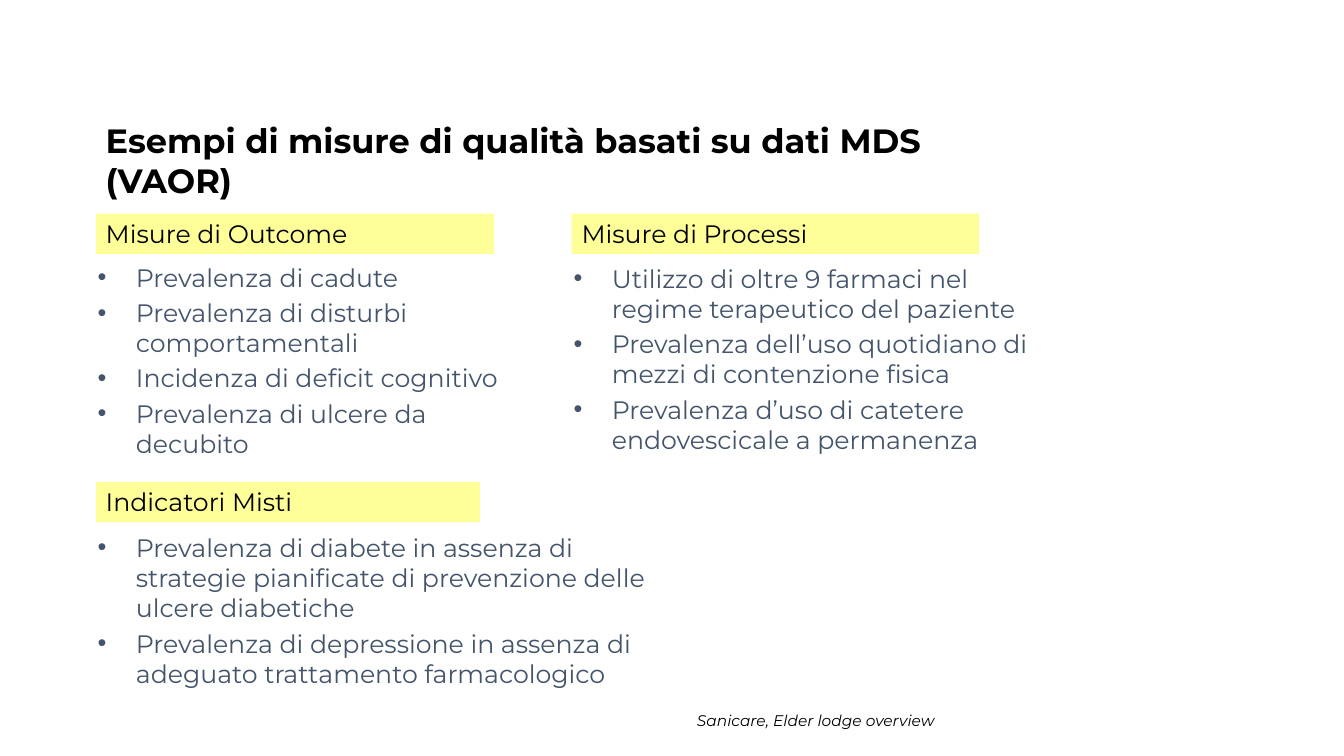
"""Build a slide of quality measures based on MDS data."""
from dataclasses import dataclass

from lxml.etree import SubElement
from pptx import Presentation
from pptx.dml.color import RGBColor
from pptx.enum.shapes import MSO_SHAPE
from pptx.enum.text import MSO_ANCHOR, MSO_AUTO_SIZE, PP_ALIGN
from pptx.oxml.ns import qn
from pptx.util import Emu, Pt


@dataclass(frozen=True)
class Theme:
    """Hold the colours and type sizes."""
    face: str = "Montserrat"
    ink: str = "000000"
    slate: str = "44546A"
    band: str = "FFFF99"
    title: int = 24
    body: int = 18
    note: int = 11
    gap: float = 3.6


THEME = Theme()
SCALE = 9144
INDENT = 38
LEFT, RIGHT = 95, 567
UPPER, LOWER = 212, 478

GROUPS = [
    ("Misure di Outcome", (LEFT, UPPER, 395), (255, 460, 224), [
        "Prevalenza di cadute",
        "Prevalenza di disturbi comportamentali",
        "Incidenza di deficit cognitivo",
        "Prevalenza di ulcere da decubito",
    ]),
    ("Indicatori Misti", (LEFT, LOWER, 381), (523, 580, 208), [
        "Prevalenza di diabete in assenza di strategie pianificate "
        "di prevenzione delle ulcere diabetiche",
        "Prevalenza di depressione in assenza di adeguato trattamento farmacologico",
    ]),
    ("Misure di Processi", (RIGHT, UPPER, 404), (256, 488, 232), [
        "Utilizzo di oltre 9 farmaci nel regime terapeutico del paziente",
        "Prevalenza dell’uso quotidiano di mezzi di contenzione fisica",
        "Prevalenza d’uso di catetere endovescicale a permanenza",
    ]),
]


def px(*sizes):
    """Turn px lengths into EMU."""
    return [Emu(size * SCALE) for size in sizes]


def apply(target, values):
    """Set each named value on the target."""
    for name, value in values.items():
        setattr(target, name, value)


def write(para, text, size, color, **style):
    """Put one styled run in a paragraph."""
    run = para.add_run()
    run.text = text
    apply(run.font, {"name": THEME.face, "size": Pt(size), **style})
    run.font.color.rgb = RGBColor.from_string(color)


def frame(shape, fit=MSO_AUTO_SIZE.SHAPE_TO_FIT_TEXT):
    """Return the wrapped text frame of a shape."""
    text = shape.text_frame
    apply(text, {"word_wrap": True, "auto_size": fit,
                 "vertical_anchor": MSO_ANCHOR.TOP})
    return text


def label(slide, box, text, size, align=PP_ALIGN.LEFT, **style):
    """Add one paragraph of free text."""
    para = frame(slide.shapes.add_textbox(*px(*box))).paragraphs[0]
    para.alignment = align
    write(para, text, size, THEME.ink, **style)


def header(slide, box, text):
    """Add a heading on a filled band."""
    band = slide.shapes.add_shape(MSO_SHAPE.RECTANGLE, *px(*box))
    band.shadow.inherit = False
    band.fill.solid()
    band.fill.fore_color.rgb = RGBColor.from_string(THEME.band)
    band.line.fill.background()
    para = frame(band).paragraphs[0]
    para.alignment = PP_ALIGN.LEFT
    write(para, text, THEME.body, THEME.ink)


def bullets(slide, box, items):
    """Add a bulleted list with hanging indents."""
    text = frame(slide.shapes.add_textbox(*px(*box)), MSO_AUTO_SIZE.NONE)
    indent, = px(INDENT)
    for index, item in enumerate(items):
        para = text.add_paragraph() if index else text.paragraphs[0]
        para.space_before = Pt(THEME.gap)
        props = para._p.get_or_add_pPr()
        props.set("marL", str(indent))
        props.set("indent", str(-indent))
        SubElement(props, qn("a:buFont"), typeface="Arial")
        SubElement(props, qn("a:buChar"), char="•")
        write(para, item, THEME.body, THEME.slate)


def main():
    """Build and save the slide."""
    deck = Presentation()
    width, height = px(1333, 750)
    apply(deck, {"slide_width": width, "slide_height": height})
    slide = deck.slides.add_slide(deck.slide_layouts[6])
    for name, (left, top, wide), (start, span, tall), items in GROUPS:
        bullets(slide, (left - 8, start, span, tall), items)
        header(slide, (left, top, wide, 40), name)
    label(slide, (LEFT, 114, 929, 91),
          "Esempi di misure di qualità basati su dati MDS (VAOR)",
          THEME.title, bold=True)
    label(slide, (348, 701, 589, 29), "Sanicare, Elder lodge overview",
          THEME.note, PP_ALIGN.RIGHT, italic=True)
    deck.save("out.pptx")


if __name__ == "__main__":
    main()
